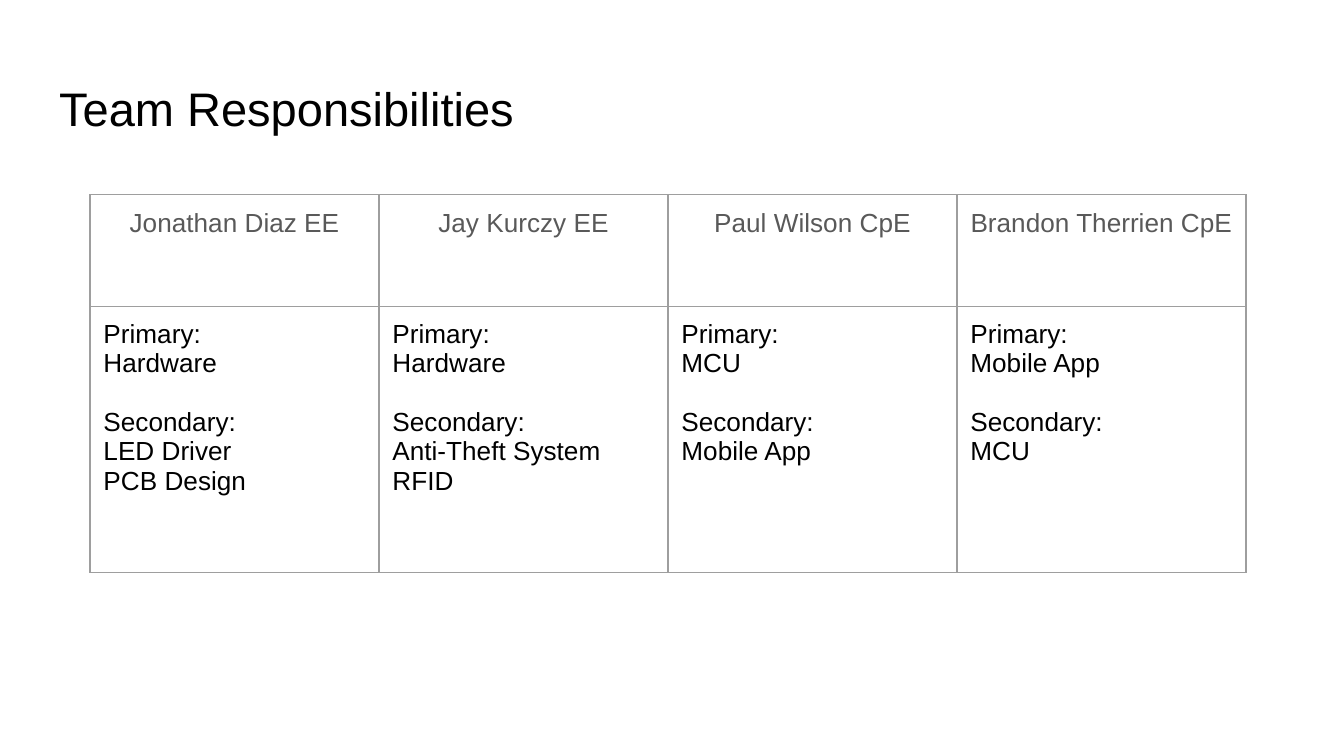
from dataclasses import dataclass

from lxml.etree import SubElement
from pptx import Presentation
from pptx.dml.color import RGBColor
from pptx.enum.text import MSO_ANCHOR, MSO_AUTO_SIZE, PP_ALIGN
from pptx.oxml.ns import qn
from pptx.util import Inches, Pt


@dataclass(frozen=True)
class Theme:
    font: str = "Arial"
    ink: str = "000000"
    heading: str = "595959"
    border: str = "9E9E9E"
    paper: str = "FFFFFF"
    title_size: float = 25.2
    table_size: float = 14
    border_width: float = 0.75


theme = Theme()
MARGIN = Inches(0.1)

TEAM = [
    ("Jonathan Diaz EE", ["Hardware"], ["LED Driver", "PCB Design"]),
    ("Jay Kurczy EE", ["Hardware"], ["Anti-Theft System", "RFID"]),
    ("Paul Wilson CpE", ["MCU"], ["Mobile App"]),
    ("Brandon Therrien CpE", ["Mobile App"], ["MCU"]),
]


def write_lines(frame, lines, size, color, align=PP_ALIGN.LEFT):
    frame.text = "\n".join(lines)
    for para in frame.paragraphs:
        para.alignment = align
        para.font.name = theme.font
        para.font.size = Pt(size)
        para.font.bold = False
        para.font.color.rgb = RGBColor.from_string(color)
        if para.text == "Secondary:":
            para.space_before = Pt(15.5)


def style_cell(cell):
    cell.margin_left = cell.margin_right = MARGIN
    cell.margin_top = cell.margin_bottom = MARGIN
    cell.vertical_anchor = MSO_ANCHOR.TOP
    properties = cell._tc.get_or_add_tcPr()
    for side in ("a:lnL", "a:lnR", "a:lnT", "a:lnB"):
        line = SubElement(properties, qn(side), w=str(Pt(theme.border_width)))
        fill = SubElement(line, qn("a:solidFill"))
        SubElement(fill, qn("a:srgbClr"), val=theme.border)
    cell.fill.background()


# Page, 16:9
deck = Presentation()
deck.slide_width = Inches(10)
deck.slide_height = Inches(10 * 9 / 16)
page = deck.slides.add_slide(deck.slide_layouts[5])
page.background.fill.solid()
page.background.fill.fore_color.rgb = RGBColor.from_string(theme.paper)

# Title
title = page.shapes.title
title.left, title.top = Inches(0.34), Inches(0.49)
title.width, title.height = Inches(9.32), Inches(0.63)
frame = title.text_frame
frame.margin_left = frame.margin_right = MARGIN
frame.margin_top = frame.margin_bottom = MARGIN
frame.vertical_anchor = MSO_ANCHOR.TOP
frame.auto_size = MSO_AUTO_SIZE.NONE
write_lines(frame, ["Team Responsibilities"], theme.title_size, theme.ink)

# Table: one column per member
column_width = Inches(2.15)
row_heights = [Inches(0.83), Inches(1.98)]
table = page.shapes.add_table(
    len(row_heights), len(TEAM), Inches(0.67), Inches(1.45),
    column_width * len(TEAM), sum(row_heights),
).table
table.first_row = table.horz_banding = False
for row, height in zip(table.rows, row_heights):
    row.height = height

for index, (member, primary, secondary) in enumerate(TEAM):
    table.columns[index].width = column_width
    name_cell, duty_cell = table.cell(0, index), table.cell(1, index)
    style_cell(name_cell)
    style_cell(duty_cell)
    write_lines(name_cell.text_frame, [member], theme.table_size,
                theme.heading, PP_ALIGN.CENTER)
    write_lines(duty_cell.text_frame,
                ["Primary:", *primary, "Secondary:", *secondary],
                theme.table_size, theme.ink)

deck.save("out.pptx")
